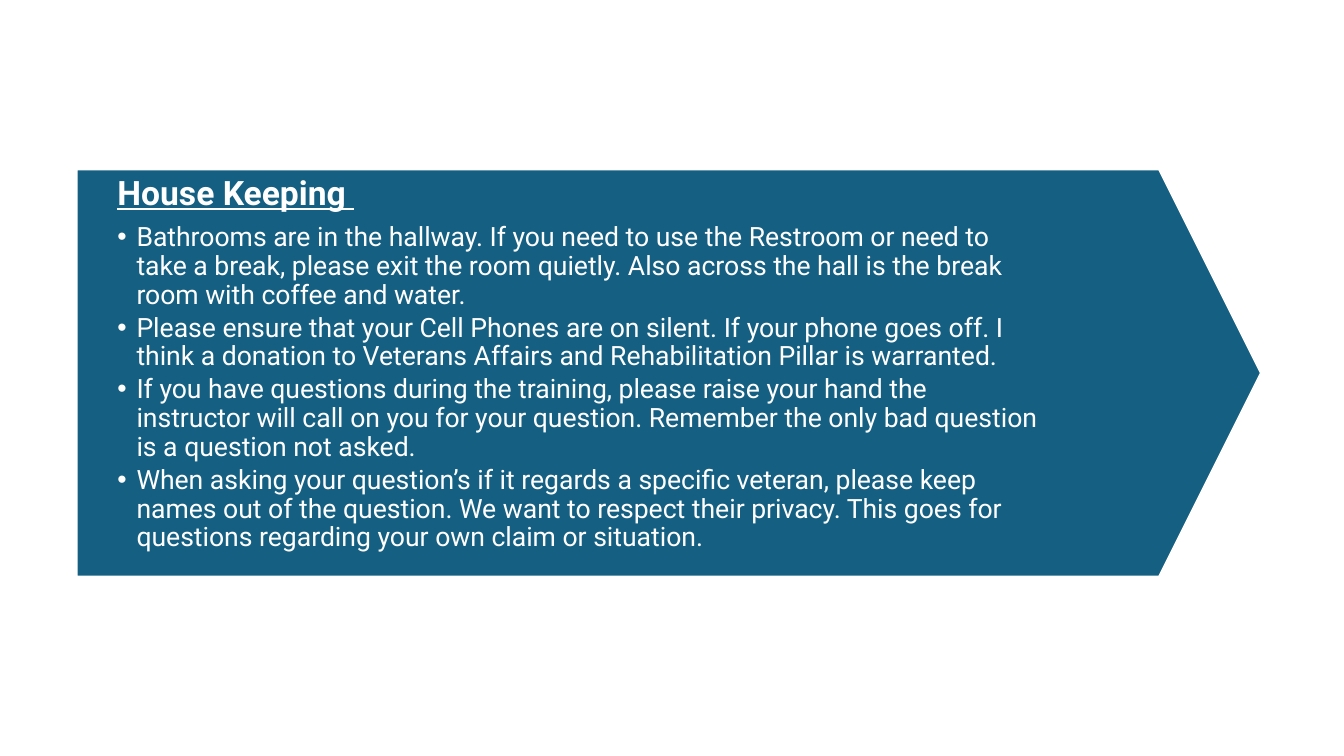
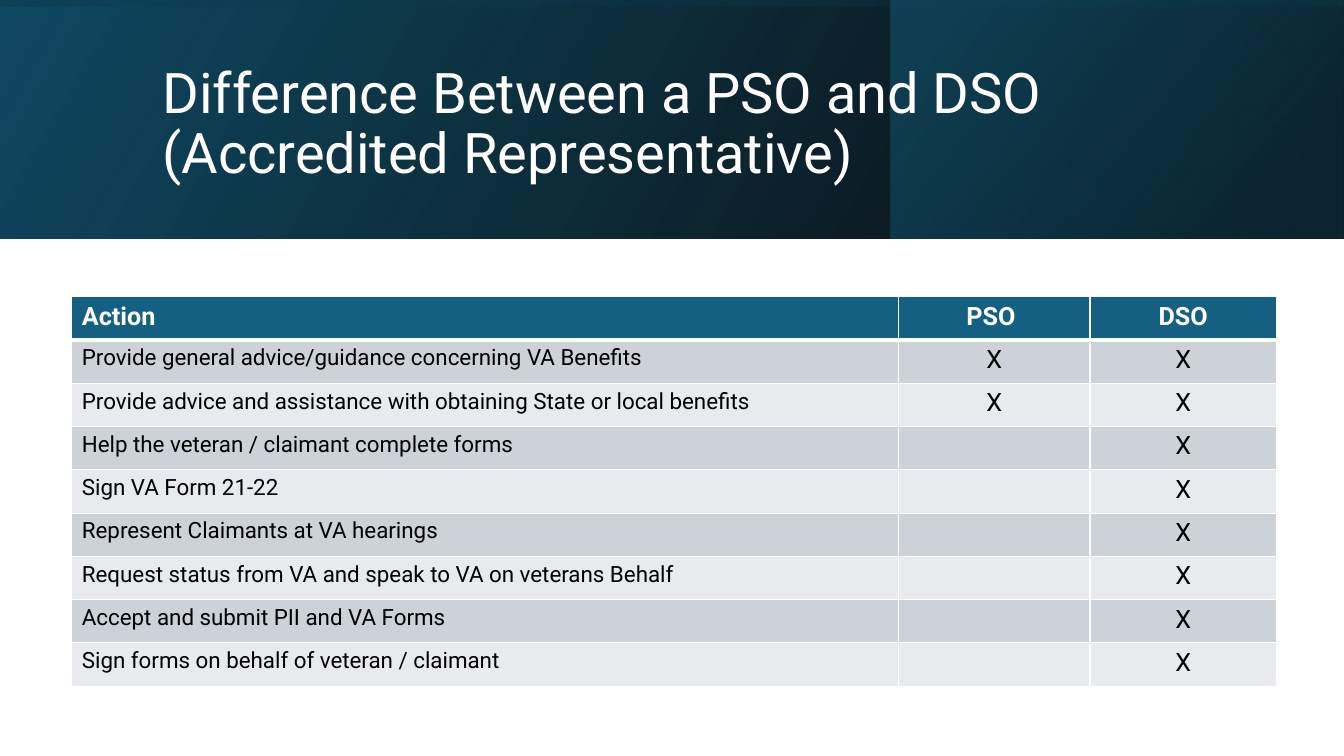
from pptx import Presentation
from pptx.dml.color import RGBColor
from pptx.enum.shapes import MSO_SHAPE as Shape
from pptx.enum.text import MSO_ANCHOR as Anchor, MSO_AUTO_SIZE as AutoSize, PP_ALIGN as Align
from pptx.oxml import parse_xml
from pptx.oxml.ns import nsdecls
from pptx.util import Cm, Pt

FONT = "Roboto"
WHITE = RGBColor(0xFF, 0xFF, 0xFF)
BLACK = RGBColor(0x00, 0x00, 0x00)
TEAL = RGBColor(0x15, 0x60, 0x82)
DEEP_TEAL = RGBColor(0x10, 0x48, 0x62)
NIGHT = RGBColor(0x0B, 0x30, 0x41)
ROW_FILLS = (RGBColor(0xCC, 0xD2, 0xD8), RGBColor(0xE8, 0xEA, 0xED))

SLIDE_WIDTH, SLIDE_HEIGHT = 33.87, 19.05
BAND_HEIGHT = 6.02
TITLE_AND_CONTENT, TITLE_ONLY = 1, 5

HOUSE_RULES = [
    "Bathrooms are in the hallway. If you need to use the Restroom or need to take a break, "
    "please exit the room quietly. Also across the hall is the break room with coffee and water.",
    "Please ensure that your Cell Phones are on silent. If your phone goes off. I think a donation "
    "to Veterans Affairs and Rehabilitation Pillar is warranted.",
    "If you have questions during the training, please raise your hand the instructor will call on "
    "you for your question. Remember the only bad question is a question not asked.",
    "When asking your question’s if it regards a specific veteran, please keep names out of the "
    "question. We want to respect their privacy. This goes for questions regarding your own claim "
    "or situation.",
]

ACTIONS = [
    ("Action", "PSO ", "DSO"),
    ("Provide general advice/guidance concerning VA Benefits", "X", "X"),
    ("Provide advice and assistance with obtaining State or local benefits", "X", "X"),
    ("Help the veteran / claimant complete forms", "", "X"),
    ("Sign VA Form 21-22", "", "X"),
    ("Represent Claimants at VA hearings", "", "X"),
    ("Request status from VA and speak to VA on veterans Behalf", "", "X"),
    ("Accept and submit PII and VA Forms", "", "X"),
    ("Sign forms on behalf of veteran / claimant", "", "X"),
]
COLUMN_WIDTHS = (20.83, 4.83, 4.7)
ROW_HEIGHT = 1.09

SIDEWAYS_SHIFT = (SLIDE_WIDTH - BAND_HEIGHT) / 2
BAND_LAYERS = [
    ((0, 0, SLIDE_WIDTH, BAND_HEIGHT), 0, 330, [(0, BLACK, 96), (100, DEEP_TEAL, 100)]),
    ((22.45, 0, 11.4, BAND_HEIGHT), 0, 320, [(19, NIGHT, 68), (100, TEAL, 48)]),
    ((SIDEWAYS_SHIFT, -SIDEWAYS_SHIFT, BAND_HEIGHT, SLIDE_WIDTH), 270, 350,
     [(23, DEEP_TEAL, 16), (99, BLACK, 45)]),
]


def place(shape, left, top, width, height):
    shape.left, shape.top = Cm(left), Cm(top)
    shape.width, shape.height = Cm(width), Cm(height)


def style_font(para, size, color=WHITE, bold=False):
    para.font.name, para.font.size = FONT, Pt(size)
    para.font.bold, para.font.color.rgb = bold, color


def add_plain_shape(page, kind, area):
    shape = page.shapes.add_shape(kind, *(Cm(length) for length in area))
    shape.shadow.inherit = False
    return shape


def bring_to_front(page, shape):
    page.shapes.element.append(shape.element)


def set_title(page, text, area, size, anchor, bold=False):
    title = page.shapes.title
    place(title, *area)
    frame = title.text_frame
    frame.text = text
    frame.word_wrap, frame.auto_size = True, AutoSize.NONE
    frame.vertical_anchor = anchor
    para = frame.paragraphs[0]
    para.alignment, para.line_spacing = Align.LEFT, 0.9
    style_font(para, size, bold=bold)
    bring_to_front(page, title)
    return title


def remove_insets(frame):
    frame.margin_left = frame.margin_right = frame.margin_top = frame.margin_bottom = 0


def add_bullet(para):
    properties = para._p.get_or_add_pPr()
    properties.set("marL", str(Cm(0.48)))
    properties.set("indent", str(-Cm(0.48)))
    properties.append(parse_xml(f'<a:buFont {nsdecls("a")} typeface="Arial"/>'))
    properties.append(parse_xml(f'<a:buChar {nsdecls("a")} char="•"/>'))


def fill_gradient(shape, angle, stops):
    shape.fill.background()
    stop_xml = "".join(
        f'<a:gs pos="{position * 1000}"><a:srgbClr val="{color}">'
        f'<a:alpha val="{opacity * 1000}"/></a:srgbClr></a:gs>'
        for position, color, opacity in stops)
    gradient = parse_xml(
        f'<a:gradFill {nsdecls("a")} rotWithShape="1"><a:gsLst>{stop_xml}</a:gsLst>'
        f'<a:lin ang="{angle * 60000}" scaled="0"/></a:gradFill>')
    properties = shape.element.spPr
    properties.replace(properties.find("{*}noFill"), gradient)


def add_band(page):
    for area, rotation, angle, stops in BAND_LAYERS:
        layer = add_plain_shape(page, Shape.RECTANGLE, area)
        layer.rotation = rotation
        layer.element.spPr.get_or_add_xfrm().set("flipH", "1")
        layer.line.fill.background()
        fill_gradient(layer, angle, stops)


def set_borders(cell, row):
    widths = {"L": 1, "R": 1, "T": 3 if row == 1 else 1, "B": 3 if row == 0 else 1}
    properties = cell._tc.get_or_add_tcPr()
    for index, (side, width) in enumerate(widths.items()):
        properties.insert(index, parse_xml(
            f'<a:ln{side} {nsdecls("a")} w="{Pt(width)}"><a:solidFill>'
            f'<a:srgbClr val="{WHITE}"/></a:solidFill></a:ln{side}>'))


def add_action_table(page):
    frame = page.shapes.add_table(
        len(ACTIONS), len(COLUMN_WIDTHS), Cm(1.81), Cm(7.48),
        Cm(sum(COLUMN_WIDTHS)), Cm(ROW_HEIGHT * len(ACTIONS)))
    table = frame.table
    for column, width in zip(table.columns, COLUMN_WIDTHS):
        column.width = Cm(width)
    for row, texts in enumerate(ACTIONS):
        table.rows[row].height = Cm(ROW_HEIGHT)
        header = row == 0
        for column, text in enumerate(texts):
            cell = table.cell(row, column)
            cell.text = text
            cell.fill.solid()
            cell.fill.fore_color.rgb = TEAL if header else ROW_FILLS[(row - 1) % 2]
            set_borders(cell, row)
            para = cell.text_frame.paragraphs[0]
            para.alignment = Align.CENTER if column else Align.LEFT
            style_font(para, 18 if header or column else 16, WHITE if header else BLACK, header)


def build_house_keeping(deck):
    page = deck.slides.add_slide(deck.slide_layouts[TITLE_AND_CONTENT])
    arrow = add_plain_shape(page, Shape.PENTAGON, (1.93, 4.27, 29.85, 10.26))
    arrow.adjustments[0] = 0.25
    arrow.fill.solid()
    arrow.fill.fore_color.rgb = TEAL
    arrow.line.color.rgb, arrow.line.width = WHITE, Pt(1.5)

    title = set_title(page, "House Keeping ", (2.96, 4.45, 23.3, 1), 24, Anchor.TOP, bold=True)
    title.text_frame.paragraphs[0].font.underline = True
    remove_insets(title.text_frame)

    body = page.placeholders[1]
    place(body, 2.96, 5.64, 23.3, 8.6)
    frame = body.text_frame
    frame.text = "\n".join(HOUSE_RULES)
    frame.word_wrap, frame.auto_size = True, AutoSize.NONE
    frame.vertical_anchor = Anchor.TOP
    remove_insets(frame)
    for para in frame.paragraphs:
        add_bullet(para)
        para.line_spacing = 0.9
        para.space_before, para.space_after = Pt(0), Pt(3)
        style_font(para, 19)
    bring_to_front(page, body)


def build_difference(deck):
    page = deck.slides.add_slide(deck.slide_layouts[TITLE_ONLY])
    add_band(page)
    set_title(page, "Difference Between a PSO and DSO (Accredited Representative)",
              (3.84, 0.97, 27, 4.37), 40, Anchor.MIDDLE)
    add_action_table(page)


def main():
    deck = Presentation()
    deck.slide_width, deck.slide_height = Cm(SLIDE_WIDTH), Cm(SLIDE_HEIGHT)
    build_house_keeping(deck)
    build_difference(deck)
    deck.save("out.pptx")


if __name__ == "__main__":
    main()
